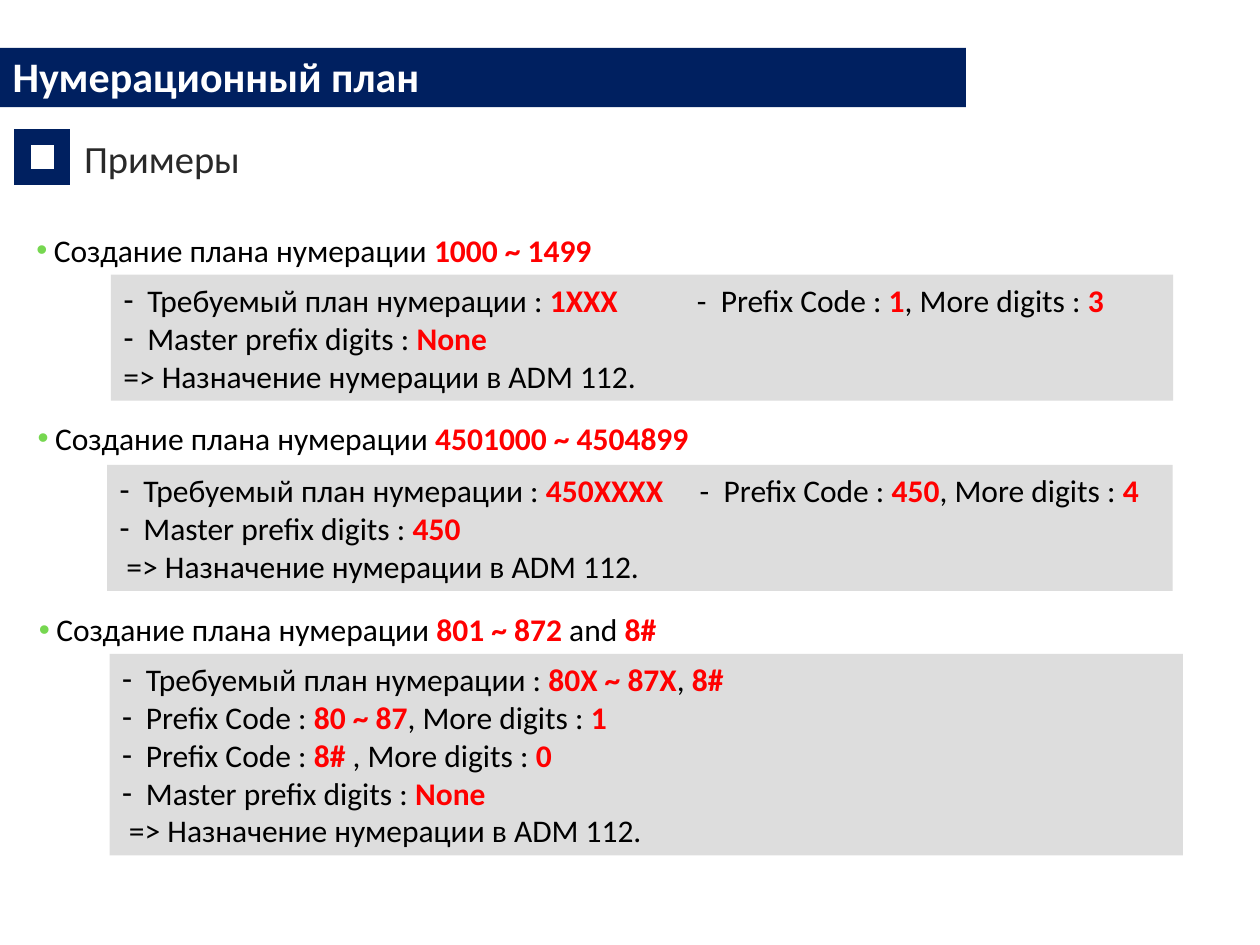
"""Build the numbering plan slide with its three worked examples."""
from dataclasses import dataclass

from lxml.etree import SubElement
from pptx import Presentation
from pptx.dml.color import RGBColor
from pptx.enum.shapes import MSO_SHAPE
from pptx.enum.text import MSO_ANCHOR, PP_ALIGN
from pptx.oxml.ns import qn
from pptx.util import Pt


@dataclass(frozen=True)
class Theme:
    font: str = "Calibri"
    navy: str = "002060"
    white: str = "FFFFFF"
    ink: str = "000000"
    subtitle_ink: str = "292929"
    accent: str = "FF0000"
    bullet: str = "76D750"
    panel: str = "DDDDDD"
    title_size: int = 24
    subtitle_size: int = 22
    body_size: int = 18
    dash_indent: float = 13.7
    bullet_indent: float = 10


def add_text(paragraph, text, *, font, size, color, bold=False):
    run = paragraph.add_run()
    run.text = text
    run.font.name = font
    run.font.size = Pt(size)
    run.font.bold = bold
    run.font.color.rgb = RGBColor.from_string(color)


def set_indent(paragraph, margin, first_line, bullet=None, color=None, tabs=()):
    properties = paragraph._p.get_or_add_pPr()
    properties.set("marL", str(Pt(margin)))
    properties.set("indent", str(Pt(first_line)))
    if color:
        bullet_color = SubElement(properties, qn("a:buClr"))
        SubElement(bullet_color, qn("a:srgbClr"), val=color)
    if bullet:
        SubElement(properties, qn("a:buFont"), typeface="Arial")
        SubElement(properties, qn("a:buChar"), char=bullet)
    if tabs:
        tab_list = SubElement(properties, qn("a:tabLst"))
        for position in tabs:
            SubElement(tab_list, qn("a:tab"), pos=str(Pt(position)), algn="l")


class SlideBuilder:
    def __init__(self, slide, theme):
        self.slide = slide
        self.theme = theme

    def add_marked_text(self, paragraph, text, **changes):
        """Add text, with the parts between asterisks highlighted."""
        theme = self.theme
        style = {"font": theme.font, "size": theme.body_size, "color": theme.ink, **changes}
        for index, part in enumerate(text.split("*")):
            if part:
                highlight = {"color": theme.accent, "bold": True} if index % 2 else {}
                add_text(paragraph, part, **{**style, **highlight})

    def rectangle(self, left, top, width, height):
        shape = self.slide.shapes.add_shape(
            MSO_SHAPE.RECTANGLE, Pt(left), Pt(top), Pt(width), Pt(height))
        shape.shadow.inherit = False
        return shape

    def text_box(self, left, top, width, height, wrap=True):
        shape = self.slide.shapes.add_textbox(Pt(left), Pt(top), Pt(width), Pt(height))
        shape.text_frame.word_wrap = wrap
        return shape.text_frame.paragraphs[0]

    def title(self, text, left, top, width, height):
        shape = self.slide.shapes.title
        shape.left, shape.top, shape.width, shape.height = map(Pt, (left, top, width, height))
        shape.fill.solid()
        shape.fill.fore_color.rgb = RGBColor.from_string(self.theme.navy)
        shape.text_frame.vertical_anchor = MSO_ANCHOR.BOTTOM
        paragraph = shape.text_frame.paragraphs[0]
        paragraph.alignment = PP_ALIGN.LEFT
        self.add_marked_text(paragraph, text, size=self.theme.title_size,
                             color=self.theme.white, bold=True)

    def subtitle(self, text, left, top, width, height):
        paragraph = self.text_box(left, top, width, height, wrap=False)
        self.add_marked_text(paragraph, text, size=self.theme.subtitle_size,
                             color=self.theme.subtitle_ink)

    def square_marker(self, left, top, width, height):
        shape = self.rectangle(left, top, width, height)
        shape.fill.background()
        shape.line.color.rgb = RGBColor.from_string(self.theme.navy)
        shape.line.width = Pt(9.25)
        SubElement(shape.line._get_or_add_ln(), qn("a:miter"), lim="800000")

    def heading(self, text, left, top, width, height=35.3):
        paragraph = self.text_box(left, top, width, height)
        paragraph.line_spacing = 1.15
        indent = self.theme.bullet_indent
        set_indent(paragraph, indent, -indent, "•", self.theme.bullet)
        self.add_marked_text(paragraph, text)

    def panel(self, items, conclusion, left, top, width, height, tab=0, inset=0):
        shape = self.rectangle(left, top, width, height)
        shape.fill.solid()
        shape.fill.fore_color.rgb = RGBColor.from_string(self.theme.panel)
        shape.line.fill.background()
        frame = shape.text_frame
        frame.word_wrap = True
        frame.vertical_anchor = MSO_ANCHOR.TOP
        indent = self.theme.dash_indent
        for index, text in enumerate([*items, conclusion]):
            paragraph = frame.paragraphs[0] if index == 0 else frame.add_paragraph()
            paragraph.alignment = PP_ALIGN.LEFT
            if index < len(items):
                tabs = (tab, tab + indent) if "\t" in text else ()
                set_indent(paragraph, indent, -indent, "-", tabs=tabs)
            else:
                set_indent(paragraph, inset, 0)
            self.add_marked_text(paragraph, text)


def main():
    presentation = Presentation()
    presentation.slide_width, presentation.slide_height = Pt(720), Pt(540)
    slide = presentation.slides.add_slide(presentation.slide_layouts[5])
    builder = SlideBuilder(slide, Theme())

    builder.title("Нумерационный план", 0, 27.4, 552, 33.8)
    builder.square_marker(12.8, 78.5, 22.6, 22.8)
    builder.subtitle("Примеры", 41, 73.4, 104.4, 33.8)

    plan = "Создание плана нумерации "
    required = "Требуемый план нумерации : "
    master = "Master prefix digits : "
    conclusion = "=> Назначение нумерации в ADM 112."

    builder.heading(plan + "*1000 ~ 1499*", 13.7, 125.3, 348)
    builder.panel(
        [required + "*1XXX*\t-\tPrefix Code : *1*, More digits : *3*", master + "*None*"],
        conclusion, 63.4, 157, 607, 72, tab=327.7)

    builder.heading(plan + "*4501000 ~ 4504899*", 14.4, 232.6, 414)
    builder.panel(
        [required + "*450XXXX*\t-\tPrefix Code : *450*, More digits : *4*", master + "*450*"],
        conclusion, 61.2, 265.7, 609, 72, tab=331.6, inset=4)

    builder.heading(plan + "*801 ~ 872* and *8#*", 15.1, 342, 507)
    builder.panel(
        [required + "*80X ~ 87X*, *8#*",
         "Prefix Code : *80 ~ 87*, More digits : *1*",
         "Prefix Code : *8#* , More digits : *0*",
         master + "*None*"],
        conclusion, 62.6, 373.7, 613.4, 115.2, inset=4)

    presentation.save("out.pptx")


if __name__ == "__main__":
    main()
